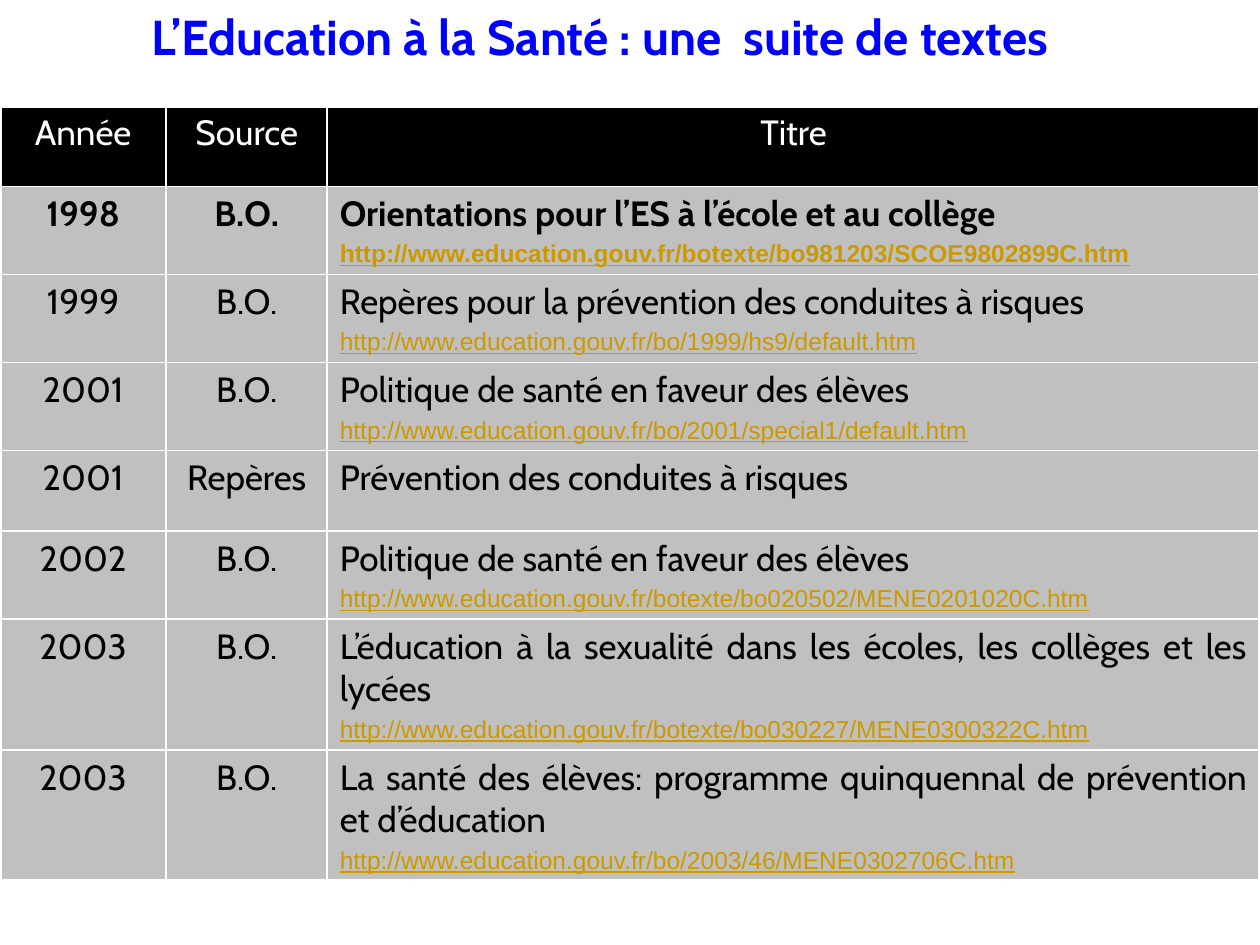
from lxml.etree import SubElement
from pptx import Presentation
from pptx.dml.color import RGBColor
from pptx.enum.text import MSO_ANCHOR as Anchor, MSO_AUTO_SIZE as AutoSize, PP_ALIGN as Align
from pptx.oxml.ns import qn
from pptx.util import Pt

WHITE = RGBColor(0xFF, 0xFF, 0xFF)
BLACK = RGBColor(0, 0, 0)
BLUE = RGBColor(0, 0, 0xFF)
GREY = RGBColor(0xC0, 0xC0, 0xC0)
GOLD = RGBColor(0xCC, 0x99, 0)

SITE = "http://www.education.gouv.fr/"
HEADINGS = ("Année", "Source", "Titre")
# Year, source, title, page on the site
PUBLICATIONS = [
    ("1998", "B.O.", "Orientations pour l’ES à l’école et au collège",
     "botexte/bo981203/SCOE9802899C.htm"),
    ("1999", "B.O.", "Repères pour la prévention des conduites à risques",
     "bo/1999/hs9/default.htm"),
    ("2001", "B.O.", "Politique de santé en faveur des élèves",
     "bo/2001/special1/default.htm"),
    ("2001", "Repères", "Prévention des conduites à risques", None),
    ("2002", "B.O.", "Politique de santé en faveur des élèves",
     "botexte/bo020502/MENE0201020C.htm"),
    ("2003", "B.O.", "L’éducation à la sexualité dans les écoles, les collèges et les lycées",
     "botexte/bo030227/MENE0300322C.htm"),
    ("2003", "B.O.", "La santé des élèves: programme quinquennal de prévention et d’éducation",
     "bo/2003/46/MENE0302706C.htm"),
]


def write(paragraph, text, size=20, font="Cabin", color=BLACK, bold=False,
          underline=False, align=Align.CENTER, before=0.2):
    """Add formatted text; before is a share of the text size."""
    paragraph.alignment = align
    paragraph.space_before = Pt(round(size * before))
    run = paragraph.add_run()
    run.text = text
    run.font.size = Pt(size)
    run.font.name = font
    run.font.bold = bold
    run.font.underline = underline
    run.font.color.rgb = color


class SlideBuilder:
    outer_line, inner_line = 2.25, 1

    def __init__(self, slide):
        self.slide = slide

    def title(self, text, left, top, width, height):
        heading = self.slide.shapes.title
        heading.left, heading.top = Pt(left), Pt(top)
        heading.width, heading.height = Pt(width), Pt(height)
        frame = heading.text_frame
        frame.word_wrap = True
        frame.auto_size = AutoSize.NONE
        frame.vertical_anchor = Anchor.TOP
        write(frame.paragraphs[0], text, size=28, color=BLUE, bold=True, before=0)

    def table(self, rows, left, top, widths, row_height):
        grid = self.slide.shapes.add_table(
            rows, len(widths), Pt(left), Pt(top),
            Pt(sum(widths)), Pt(rows * row_height)).table
        for column, width in zip(grid.columns, widths):
            column.width = Pt(width)
        for row in grid.rows:
            row.height = Pt(row_height)
        for r in range(rows):
            for c in range(len(widths)):
                self.borders(grid.cell(r, c), {
                    "a:lnL": c == 0, "a:lnR": c == len(widths) - 1,
                    "a:lnT": r == 0, "a:lnB": r == rows - 1})
        return grid

    def borders(self, cell, sides):
        """Draw white lines, heavier where the side is on the outer edge."""
        properties = cell._tc.get_or_add_tcPr()
        for tag, is_outer in sides.items():
            width = self.outer_line if is_outer else self.inner_line
            line = SubElement(properties, qn(tag), w=str(Pt(width)))
            fill = SubElement(line, qn("a:solidFill"))
            SubElement(fill, qn("a:srgbClr"), val=str(WHITE))

    def cell(self, cell, text, fill, **style):
        cell.fill.solid()
        cell.fill.fore_color.rgb = fill
        write(cell.text_frame.paragraphs[0], text, **style)


def main():
    deck = Presentation()
    deck.slide_width, deck.slide_height = Pt(720), Pt(540)
    builder = SlideBuilder(deck.slides.add_slide(deck.slide_layouts[5]))

    # Title
    builder.title("L’Education à la Santé : une  suite de textes ", 0, 0, 692, 90)

    # Header row
    texts = builder.table(len(PUBLICATIONS) + 1, 0, 60.5, (95, 92, 533), 46)
    for c, heading in enumerate(HEADINGS):
        builder.cell(texts.cell(0, c), heading, BLACK, color=WHITE)

    # One row per publication, the first one in bold
    for r, (year, source, subject, page) in enumerate(PUBLICATIONS, start=1):
        bold = r == 1
        builder.cell(texts.cell(r, 0), year, GREY, bold=bold)
        builder.cell(texts.cell(r, 1), source, GREY, bold=bold)
        subject_cell = texts.cell(r, 2)
        builder.cell(subject_cell, subject, GREY, bold=bold, align=Align.JUSTIFY)
        if page:
            write(subject_cell.text_frame.add_paragraph(), SITE + page, size=14,
                  font="Arial", color=GOLD, bold=bold, underline=True,
                  align=Align.JUSTIFY)

    deck.save("out.pptx")


if __name__ == "__main__":
    main()
